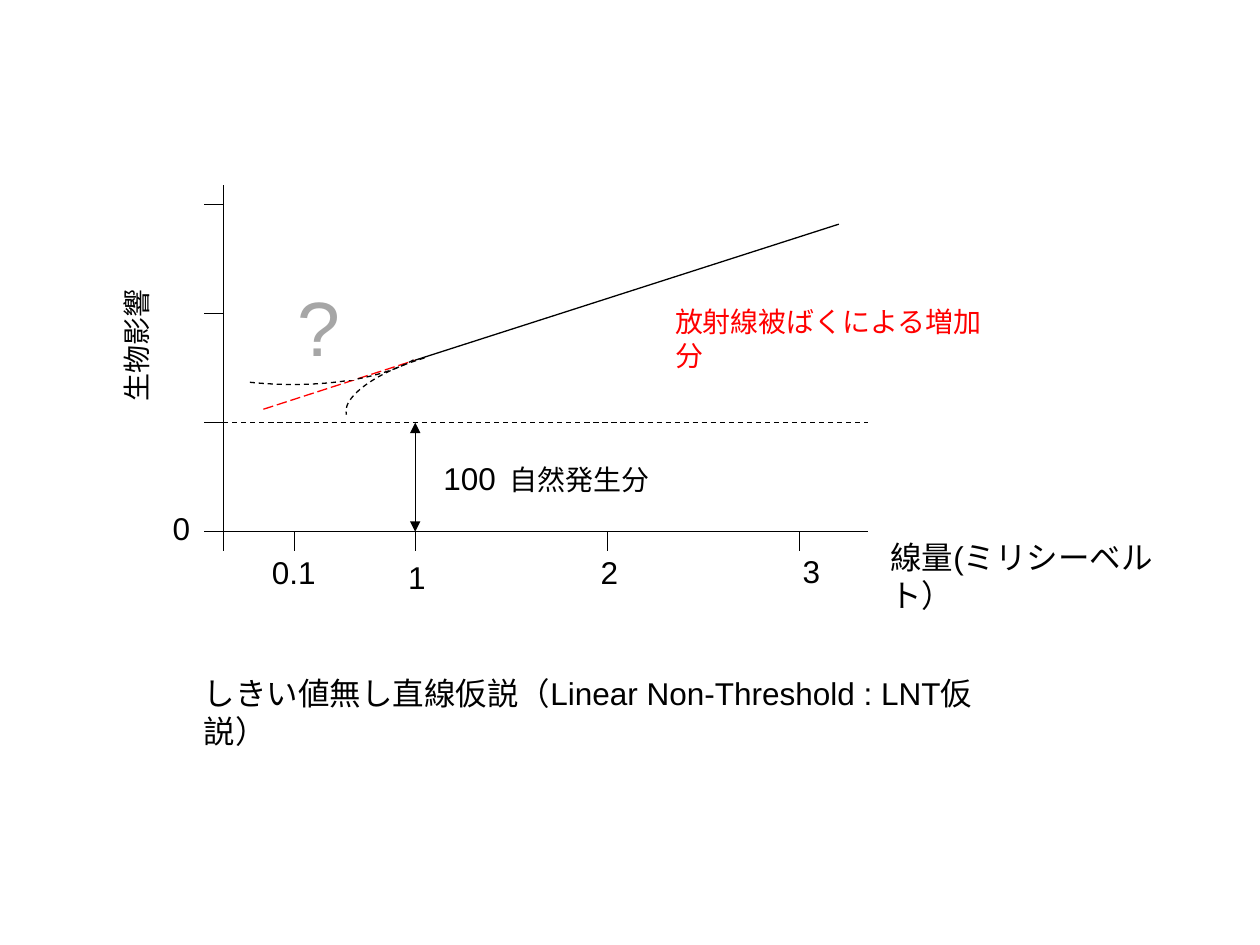
from typing import NamedTuple

from lxml import etree
from pptx import Presentation
from pptx import util as u
from pptx.dml.color import RGBColor
from pptx.enum import dml, shapes, text
from pptx.oxml.ns import qn

BLACK = RGBColor(0x00, 0x00, 0x00)
RED = RGBColor(0xFF, 0x00, 0x00)
GREY = RGBColor(0xA6, 0xA6, 0xA6)
WHITE = RGBColor(0xFF, 0xFF, 0xFF)
DASH = dml.MSO_LINE.DASH
LONG_DASH = dml.MSO_LINE.LONG_DASH

# Axes, in cm
ORIGIN_X, ORIGIN_Y = 4.5, 10.72
AXIS_END_X, AXIS_TOP_Y = 17.5, 3.73
STEP_X, STEP_Y = 3.87, 2.2
TICK = 0.39
BASELINE_Y = ORIGIN_Y - STEP_Y
DOSE_1_X = ORIGIN_X + STEP_X


class Segment(NamedTuple):
    x1: float
    y1: float
    x2: float
    y2: float
    color: RGBColor = BLACK
    dash: dml.MSO_LINE | None = None
    arrows: bool = False


class Label(NamedTuple):
    words: str
    left: float
    top: float
    width: float
    height: float = 1.02
    size: int = 18
    color: RGBColor = BLACK
    wrap: bool = False
    rotation: float = 0


class Arc(NamedTuple):
    left: float
    top: float
    width: float
    height: float
    rotation: float
    start: float | None = None
    flip: bool = False


def draw_segment(page, segment: Segment) -> None:
    ends = [u.Cm(value) for value in segment[:4]]
    line = page.shapes.add_connector(shapes.MSO_CONNECTOR.STRAIGHT, *ends)
    line.line.color.rgb = segment.color
    line.line.width = u.Pt(0.75)
    if segment.dash is not None:
        line.line.dash_style = segment.dash
    properties = line._element.spPr
    if segment.arrows:
        outline = properties.find(qn("a:ln"))
        for end in ("a:headEnd", "a:tailEnd"):
            etree.SubElement(outline, qn(end), type="triangle")
    etree.SubElement(properties, qn("a:effectLst"))


def write_text(box, words: str, *, size: int, color: RGBColor, wrap: bool = False) -> None:
    frame = box.text_frame
    frame.word_wrap = wrap
    frame.auto_size = text.MSO_AUTO_SIZE.SHAPE_TO_FIT_TEXT
    frame.vertical_anchor = text.MSO_ANCHOR.TOP
    para = frame.paragraphs[0]
    para.alignment = text.PP_ALIGN.LEFT
    span = para.add_run()
    span.text = words
    span.font.name = "Arial"
    span.font.size = u.Pt(size)
    span.font.color.rgb = color


def draw_label(page, label: Label) -> None:
    box = page.shapes.add_textbox(*(u.Cm(value) for value in label[1:5]))
    box.rotation = label.rotation
    write_text(box, label.words, size=label.size, color=label.color, wrap=label.wrap)


def draw_arc(page, arc: Arc) -> None:
    curve = page.shapes.add_shape(shapes.MSO_SHAPE.ARC, *(u.Cm(value) for value in arc[:4]))
    curve.shadow.inherit = False
    curve.fill.background()
    curve.line.color.rgb = BLACK
    curve.line.width = u.Pt(0.75)
    curve.line.dash_style = DASH
    curve.rotation = arc.rotation
    if arc.start is not None:
        curve.adjustments[0] = arc.start
    if arc.flip:
        curve._element.spPr.find(qn("a:xfrm")).set("flipH", "1")


def draw_question_mark(page) -> None:
    box = page.shapes.add_shape(
        shapes.MSO_SHAPE.RECTANGLE, u.Cm(5.74), u.Cm(5.51), u.Cm(1.4), u.Cm(2.13))
    box.shadow.inherit = False
    box.fill.background()
    box.line.color.rgb = WHITE
    box.line.width = u.Pt(0.75)
    write_text(box, "?", size=44, color=GREY)


TICKS_X = [ORIGIN_X + STEP_X * index for index in range(4)] + [5.94]
TICKS_Y = [ORIGIN_Y - STEP_Y * index for index in range(4)]

SEGMENTS = [
    # Natural level and the linear response
    Segment(ORIGIN_X, BASELINE_Y, AXIS_END_X, BASELINE_Y, dash=DASH),
    Segment(DOSE_1_X, 7.26, 16.91, 4.52),
    # Axes and ticks
    Segment(ORIGIN_X, AXIS_TOP_Y, ORIGIN_X, ORIGIN_Y),
    Segment(ORIGIN_X, ORIGIN_Y, AXIS_END_X, ORIGIN_Y),
    *(Segment(ORIGIN_X, y, ORIGIN_X - TICK, y) for y in TICKS_Y),
    *(Segment(x, ORIGIN_Y, x, ORIGIN_Y + TICK) for x in TICKS_X),
    # Height of the natural level, and the extrapolated line
    Segment(DOSE_1_X, BASELINE_Y, DOSE_1_X, ORIGIN_Y, arrows=True),
    Segment(5.31, 8.25, DOSE_1_X, 7.26, color=RED, dash=LONG_DASH),
]

LABELS = [
    # Axis values
    Label("0", 3.23, 10.13, 0.86),
    Label("0.1", 5.23, 11.02, 1.4),
    Label("1", 7.98, 11.13, 0.86),
    Label("2", 11.86, 11.02, 0.86),
    Label("3", 15.93, 11, 0.86),
    # Axis titles
    Label("生物影響", 1.37, 6.48, 2.79, 0.94, size=16, rotation=270),
    Label("線量(ミリシーベルト）", 17.7, 10.72, 6.02, wrap=True),
    # Notes on the curve
    Label("100", 8.69, 9.12, 1.57),
    Label("自然発生分", 10.03, 9.19, 3.33, 0.94, size=16),
    Label("放射線被ばくによる増加分", 13.36, 6.02, 6.88, 0.94, size=16, color=RED, wrap=True),
    # Caption
    Label("しきい値無し直線仮説（Linear Non-Threshold : LNT仮説）", 3.86, 13.46, 16.36, wrap=True),
]

ARCS = [
    Arc(6.91, 7.19, 3.66, 1.32, rotation=343.8, flip=True),
    Arc(3.63, 2.41, 3.12, 7.49, rotation=95.7, start=170.14),
]


def main() -> None:
    deck = Presentation()
    deck.slide_width, deck.slide_height = u.Cm(25.4), u.Cm(19.05)
    page = deck.slides.add_slide(deck.slide_layouts[6])
    for segment in SEGMENTS:
        draw_segment(page, segment)
    for arc in ARCS:
        draw_arc(page, arc)
    draw_question_mark(page)
    for label in LABELS:
        draw_label(page, label)
    deck.save("out.pptx")


if __name__ == "__main__":
    main()
